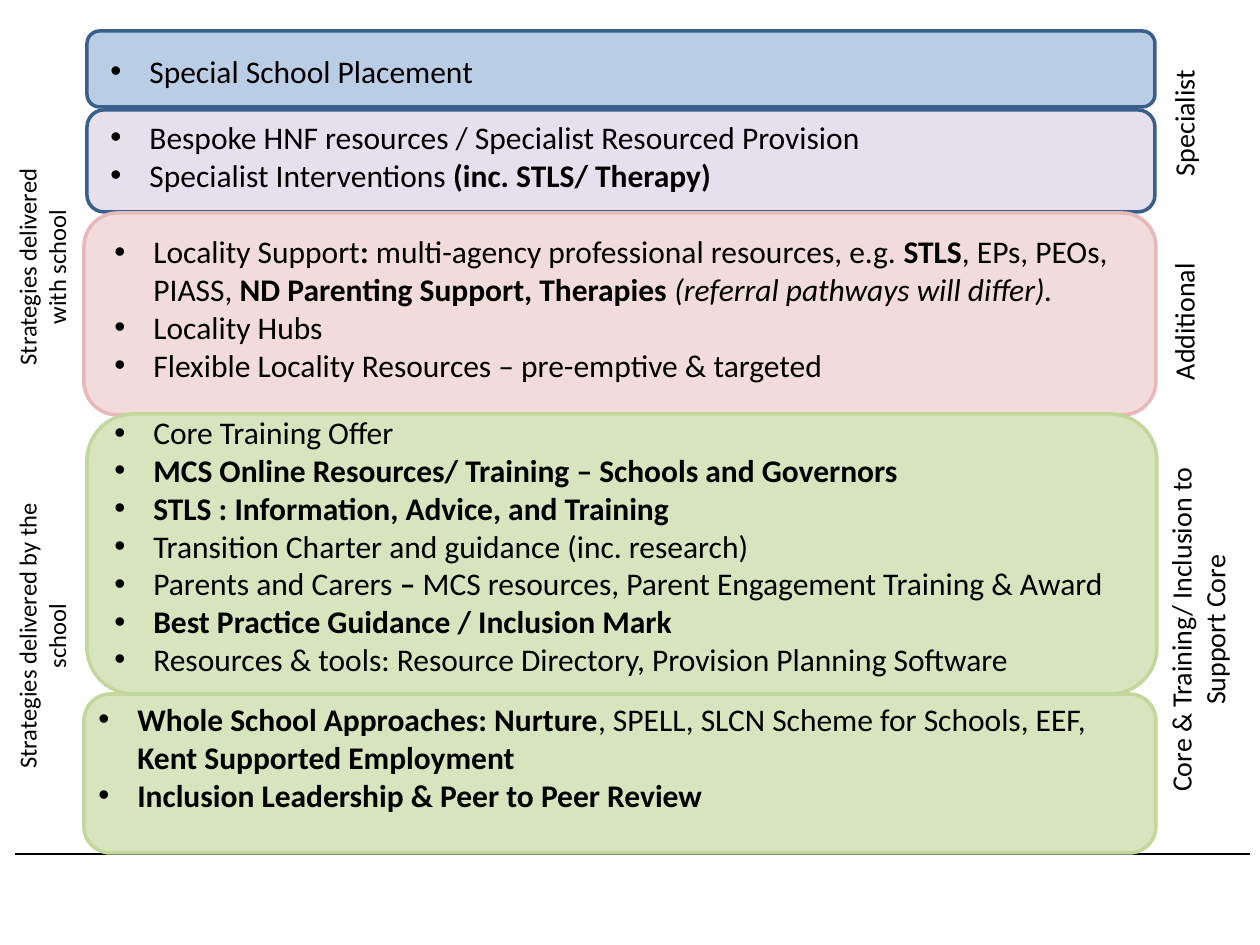
from pptx import Presentation
from pptx.dml.color import RGBColor
from pptx.enum.shapes import MSO_CONNECTOR, MSO_SHAPE
from pptx.enum.text import MSO_ANCHOR, PP_ALIGN
from pptx.oxml.ns import qn
from pptx.util import Emu, Pt
from lxml import etree

EMU_PER_PX = 914400 / 126
FONT = "Calibri"
BULLET_INDENT = 39
COLOURS = {
    "text": "000000",
    "special": "B9CDE5",
    "bespoke": "E6E0EC",
    "blue line": "3A5F8C",
    "locality": "F2DCDB",
    "pink line": "E6B9B8",
    "core": "D7E4BD",
    "green line": "C3D69B",
}

# Each tier: band box, fill, line, text box, paragraphs of (text, style) runs
TIERS = [
    ((87, 110, 1068, 102), "bespoke", "blue line", (98, 112, 1003, 89), [
        [("Bespoke HNF resources / Specialist Resourced Provision", "")],
        [("Specialist Interventions", ""), (" (inc. STLS/ Therapy)", "b")],
    ]),
    ((87, 31, 1068, 76), "special", "blue line", (98, 46, 581, 51), [
        [("Special School Placement", "")],
    ]),
    ((84, 694, 1072, 159), "core", "green line", (86, 694, 1068, 175), [
        [("Whole School Approaches: Nurture", "b"),
         (", SPELL, SLCN Scheme for Schools, EEF, ", ""),
         ("Kent Supported Employment", "b")],
        [("Inclusion Leadership & Peer to Peer Review", "b")],
    ]),
    ((84, 213, 1072, 202), "locality", "pink line", (102, 226, 1053, 168), [
        [("Locality Support", ""), (": ", "b"),
         ("multi-agency professional resources, e.g. ", ""), ("STLS", "b"),
         (", EPs, PEOs, PIASS, ", ""),
         ("ND Parenting Support, Therapies ", "b"),
         ("(referral pathways will differ).", "i")],
        [("Locality Hubs", "")],
        [("Flexible Locality Resources – pre-emptive & targeted", "")],
    ]),
    ((87, 414, 1070, 280), "core", "green line", (102, 407, 1072, 432), [
        [("Core Training Offer", "")],
        [("MCS Online Resources/ Training – Schools and Governors", "b")],
        [("STLS : Information, Advice, and Training", "b")],
        [("Transition Charter and guidance (inc. research)", "")],
        [("Parents and Carers ", ""), ("– ", "b"),
         ("MCS resources, Parent Engagement Training & Award", "")],
        [("Best Practice Guidance / Inclusion Mark", "b")],
        [("Resources & tools: Resource Directory, Provision Planning Software", "")],
    ]),
]

# Each side label: text, unrotated box, size, alignment, wrap
SIDE_LABELS = [
    ("Additional", (1105, 290, 158, 47), 16, PP_ALIGN.LEFT, False),
    ("Specialist", (1111, 92, 146, 47), 16, PP_ALIGN.LEFT, True),
    ("Core & Training/ Inclusion to Support Core",
     (1005, 571, 423, 118), 16, PP_ALIGN.CENTER, True),
    ("Strategies delivered by the school",
     (-121, 600, 326, 72), 14, PP_ALIGN.CENTER, True),
    ("Strategies delivered with school",
     (-84, 231, 252, 72), 14, PP_ALIGN.CENTER, True),
]


def px(value):
    return Emu(round(value * EMU_PER_PX))


def colour(name):
    return RGBColor.from_string(COLOURS[name])


def add_band(slide, box, fill, line):
    shape = slide.shapes.add_shape(MSO_SHAPE.ROUNDED_RECTANGLE, *map(px, box))
    shape.shadow.inherit = False
    shape.fill.solid()
    shape.fill.fore_color.rgb = colour(fill)
    shape.line.color.rgb = colour(line)
    shape.line.width = Pt(2)


def add_text_frame(slide, box, wrap=True, rotation=0):
    text_box = slide.shapes.add_textbox(*map(px, box))
    text_box.rotation = rotation
    frame = text_box.text_frame
    frame.word_wrap = wrap
    frame.vertical_anchor = MSO_ANCHOR.TOP
    return frame


def add_run(paragraph, text, size, style=""):
    run = paragraph.add_run()
    run.text = text
    run.font.name = FONT
    run.font.size = Pt(size)
    run.font.bold = style == "b"
    run.font.italic = style == "i"
    run.font.color.rgb = colour("text")


def set_bullet(paragraph):
    properties = paragraph._p.get_or_add_pPr()
    properties.set("marL", str(px(BULLET_INDENT)))
    properties.set("indent", str(-px(BULLET_INDENT)))
    etree.SubElement(properties, qn("a:buFont")).set("typeface", "Arial")
    etree.SubElement(properties, qn("a:buChar")).set("char", "•")


def add_bullet_list(slide, box, items):
    frame = add_text_frame(slide, box)
    for index, runs in enumerate(items):
        paragraph = frame.add_paragraph() if index else frame.paragraphs[0]
        set_bullet(paragraph)
        for text, style in runs:
            add_run(paragraph, text, 18, style)


def add_side_label(slide, text, box, size, alignment, wrap):
    frame = add_text_frame(slide, box, wrap, rotation=270)
    paragraph = frame.paragraphs[0]
    paragraph.alignment = alignment
    add_run(paragraph, text, size)


def add_base_line(slide, left, right, y):
    line = slide.shapes.add_connector(
        MSO_CONNECTOR.STRAIGHT, px(left), px(y), px(right), px(y))
    line.line.color.rgb = colour("text")
    line.line.width = Pt(1)
    etree.SubElement(line._element.spPr, qn("a:effectLst"))


def main():
    presentation = Presentation()
    presentation.slide_width = px(1260)
    presentation.slide_height = px(945)
    slide = presentation.slides.add_slide(presentation.slide_layouts[6])

    # Ground line behind the tiers
    add_base_line(slide, 15, 1250, 854)

    # Tiers of support
    for band, fill, line, text_area, items in TIERS:
        add_band(slide, band, fill, line)
        add_bullet_list(slide, text_area, items)

    # Rotated labels on both sides
    for label in SIDE_LABELS:
        add_side_label(slide, *label)

    presentation.save("out.pptx")


if __name__ == "__main__":
    main()
